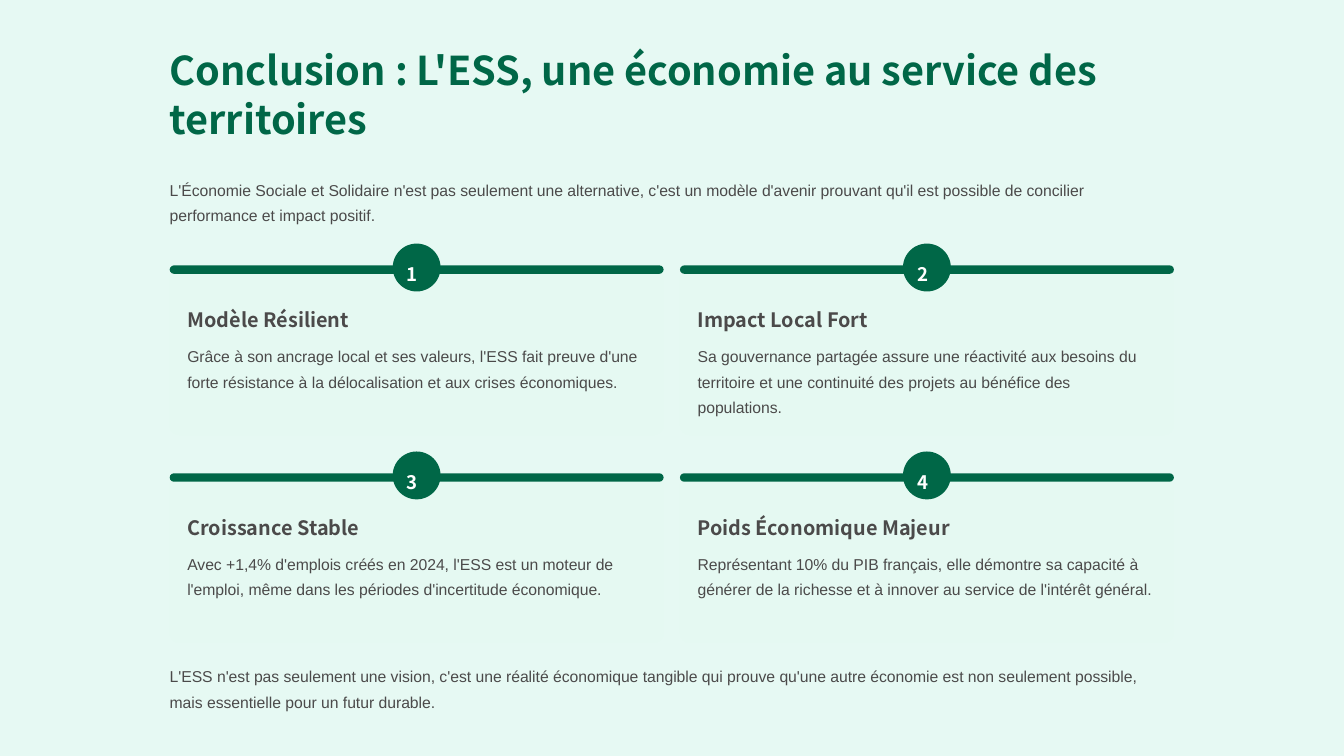
from lxml import etree
from pptx import Presentation
from pptx.dml.color import RGBColor
from pptx.enum.shapes import MSO_SHAPE as SHAPE
from pptx.oxml.ns import qn
from pptx.util import Inches, Pt

GREEN, GREY, MINT, WHITE = "006747", "4B4A4A", "E5F9F2", "FFFFFF"
HEADING, BODY = "Noto Sans CJK SC", "Arial"
LEFT, TOP = 2.02, 3.18
COLUMN_STEP, ROW_STEP = 6.075, 2.475
CARD_WIDTH, CARD_HEIGHT = 5.88, 2
BADGE = 0.57

CARDS = [
    ("Modèle Résilient",
     "Grâce à son ancrage local et ses valeurs, l'ESS fait preuve d'une forte "
     "résistance à la délocalisation et aux crises économiques."),
    ("Impact Local Fort",
     "Sa gouvernance partagée assure une réactivité aux besoins du territoire "
     "et une continuité des projets au bénéfice des populations."),
    ("Croissance Stable",
     "Avec +1,4% d'emplois créés en 2024, l'ESS est un moteur de l'emploi, "
     "même dans les périodes d'incertitude économique."),
    ("Poids Économique Majeur",
     "Représentant 10% du PIB français, elle démontre sa capacité à générer "
     "de la richesse et à innover au service de l'intérêt général."),
]


def color(value):
    return RGBColor.from_string(value)


def add_text(s, text, x, y, w, h, size, spacing, fill=GREY, font=BODY, wrap=True):
    tf = s.shapes.add_textbox(Inches(x), Inches(y), Inches(w), Inches(h)).text_frame
    tf.margin_left = tf.margin_top = tf.margin_right = tf.margin_bottom = 0
    tf.word_wrap = wrap
    tf.text = text
    p = tf.paragraphs[0]
    p.line_spacing = Pt(spacing)
    r = p.runs[0]
    r.font.name = font
    r.font.size = Pt(size)
    r.font.bold = font == HEADING
    r.font.color.rgb = color(fill)
    r_pr = r.font._element
    etree.SubElement(r_pr, qn("a:ea")).set("typeface", font)


def add_body(s, text, x, y, w, h):
    add_text(s, text, x, y, w, h, 13.5, 21.5)


def add_round(s, x, y, w, h, fill, radius=0.5, alpha=None):
    sp = s.shapes.add_shape(SHAPE.ROUNDED_RECTANGLE, Inches(x), Inches(y),
                            Inches(w), Inches(h))
    sp.adjustments[0] = radius
    sp.shadow.inherit = False
    sp.fill.solid()
    sp.fill.fore_color.rgb = color(fill)
    sp.line.fill.background()
    if alpha:
        rgb = sp._element.spPr.find(".//" + qn("a:srgbClr"))
        etree.SubElement(rgb, qn("a:alpha")).set("val", str(alpha * 1000))


def add_card(s, number, x, y, title, body):
    badge_x = x + (CARD_WIDTH - BADGE) / 2
    add_round(s, x, y, CARD_WIDTH, CARD_HEIGHT, MINT, radius=0.06, alpha=95)
    add_round(s, x, y - 0.02, CARD_WIDTH, 0.1, GREEN)
    add_round(s, badge_x, y - 0.28, BADGE, BADGE, GREEN)
    add_text(s, str(number), badge_x + 0.17, y - 0.14, 0.23, 0.28, 16, 26,
             WHITE, HEADING, wrap=False)
    add_text(s, title, x + 0.21, y + 0.48, 3.15, 0.3, 17, 21,
             font=HEADING, wrap=False)
    add_body(s, body, x + 0.21, y + 0.88, 5.46, 0.91)


def main():
    prs = Presentation()
    prs.slide_width, prs.slide_height = Inches(16), Inches(9)
    s = prs.slides.add_slide(prs.slide_layouts[6])
    s.background.fill.solid()
    s.background.fill.fore_color.rgb = color("E6F9F3")

    add_text(s, "Conclusion : L'ESS, une économie au service des territoires",
             LEFT, 0.52, 11.96, 1.18, 34, 42.5, GREEN, HEADING)
    add_body(s, "L'Économie Sociale et Solidaire n'est pas seulement une alternative, "
             "c'est un modèle d'avenir prouvant qu'il est possible de concilier "
             "performance et impact positif.", LEFT, 2.08, 11.96, 0.6)
    for i, (title, body) in enumerate(CARDS):
        row, column = divmod(i, 2)
        add_card(s, i + 1, LEFT + column * COLUMN_STEP, TOP + row * ROW_STEP,
                 title, body)
    add_body(s, "L'ESS n'est pas seulement une vision, c'est une réalité économique "
             "tangible qui prouve qu'une autre économie est non seulement possible, "
             "mais essentielle pour un futur durable.", LEFT, 7.87, 11.96, 0.6)

    prs.save("out.pptx")


if __name__ == "__main__":
    main()
